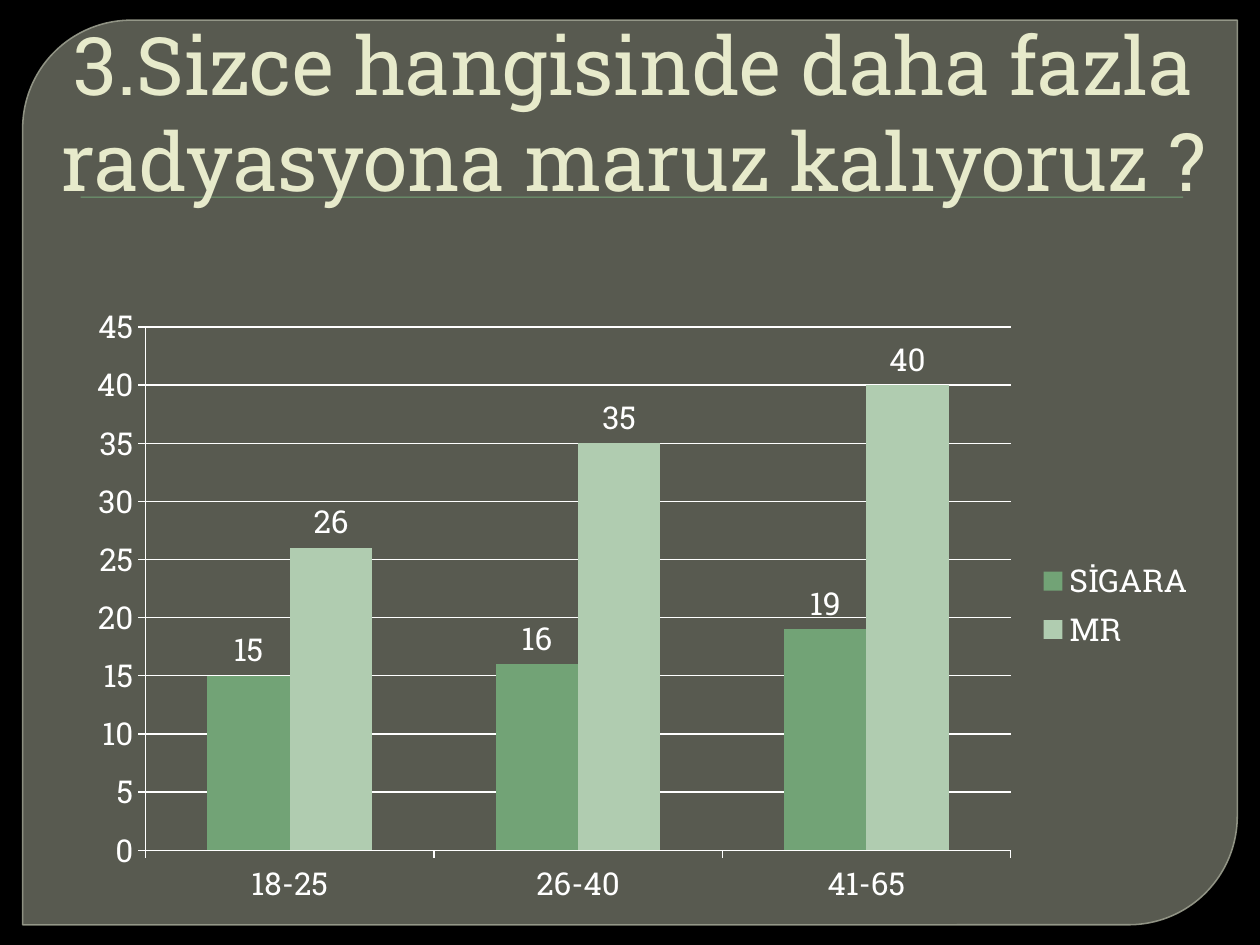
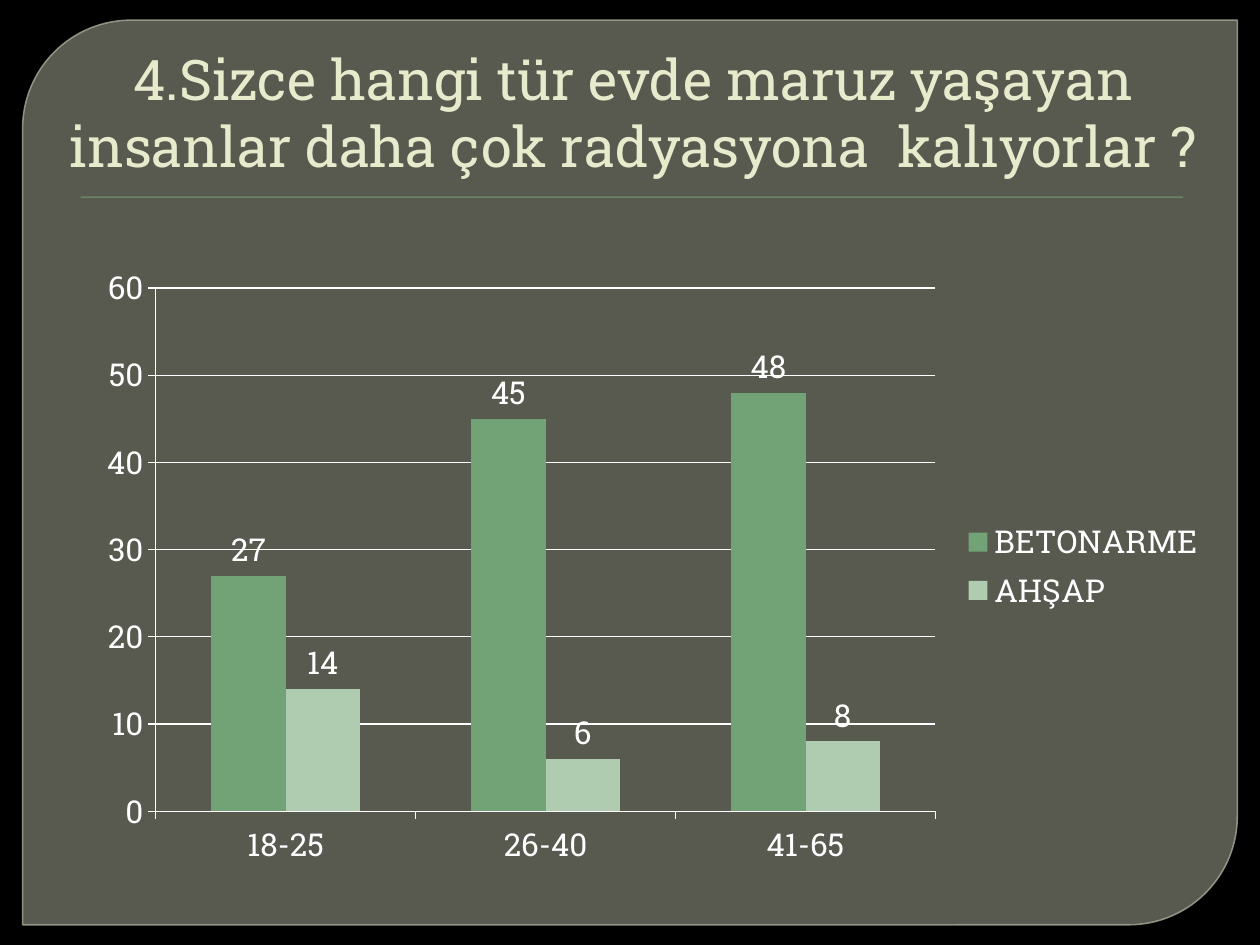
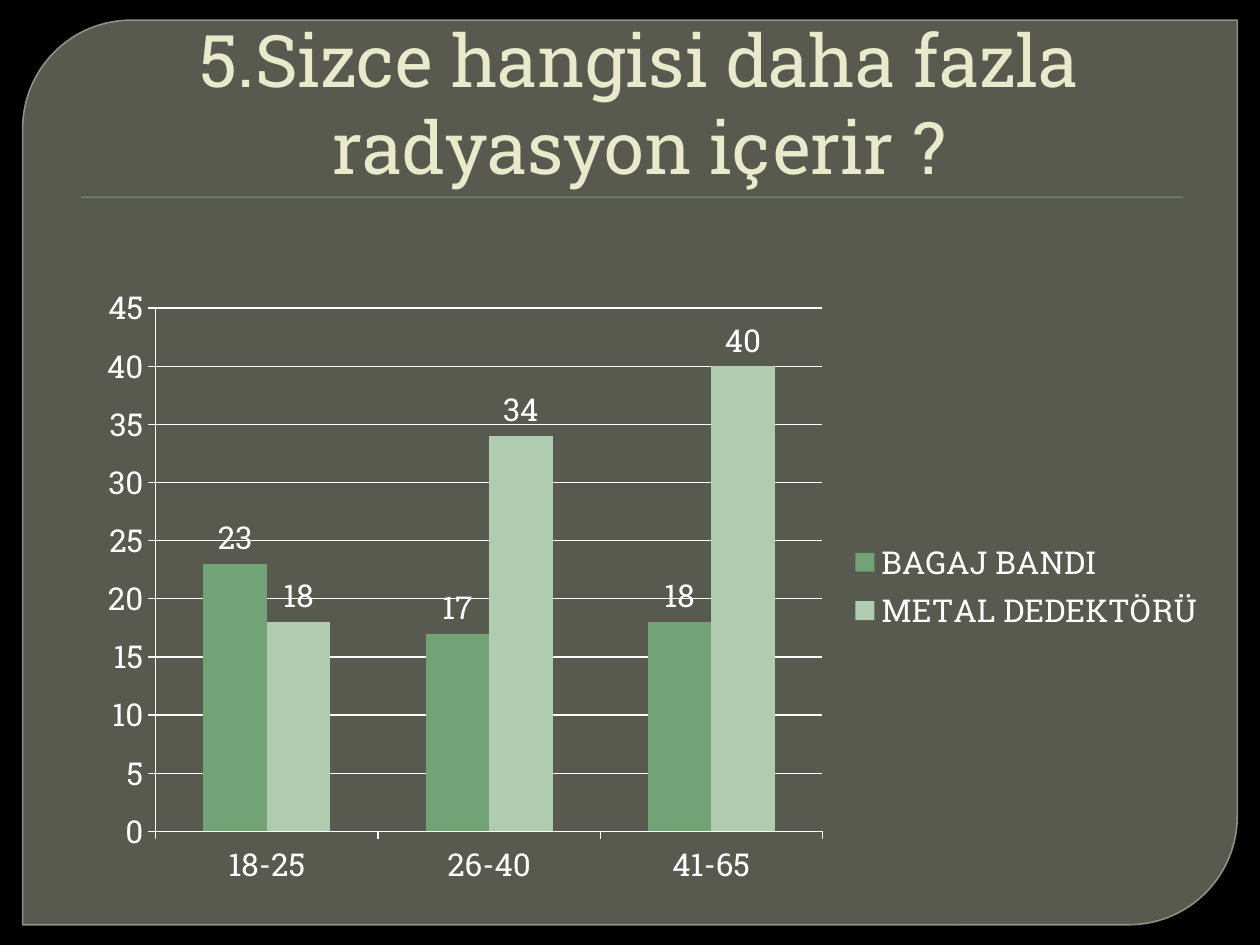
from dataclasses import dataclass

from lxml.etree import SubElement
from pptx import Presentation
from pptx.chart.data import CategoryChartData
from pptx.dml.color import RGBColor
from pptx.enum.chart import XL_CHART_TYPE, XL_LABEL_POSITION, XL_LEGEND_POSITION, XL_TICK_MARK
from pptx.enum.shapes import MSO_SHAPE
from pptx.enum.text import MSO_ANCHOR, MSO_AUTO_SIZE, PP_ALIGN
from pptx.oxml.ns import qn
from pptx.util import Inches, Pt


@dataclass(frozen=True)
class Theme:
    font: str = "Roboto Slab"
    backdrop: str = "000000"
    panel: str = "888B7B"
    panel_edge: str = "9DA090"
    rule: str = "72A376"
    title: str = "E7EACB"
    chart_text: str = "FFFFFF"
    bars: tuple = ("72A376", "B0CCB0")
    chart_size: float = 18
    edge_width: float = 0.87
    grid_width: float = 0.75


THEME = Theme()
TITLE_ONLY = 5
SLIDE_WIDTH, SLIDE_HEIGHT = Inches(10), Inches(7.5)
COLUMNS, ROWS = 100, 75

# Regions are left, top, width, height in grid columns and rows
PANEL_BOX = (1.8, 1.6, 96.4, 71.8)
RULE_BOX = (6.4, 15.6, 87.5, 0.1)

AGE_GROUPS = ("18-25", "26-40", "41-65")
QUESTIONS = (
    {
        "question": "3.Sizce hangisinde daha fazla radyasyona maruz kalıyoruz ?",
        "title_size": 46,
        "title_box": (0, 0, 100, 17),
        "chart_box": (5.9, 23.3, 90, 49.5),
        "answers": {"SİGARA": (15, 16, 19), "MR": (26, 35, 40)},
        "scale": {"maximum_scale": 45, "major_unit": 5},
    },
    {
        "question": "4.Sizce hangi tür evde maruz yaşayan insanlar daha çok radyasyona  kalıyorlar ?",
        "title_size": 32,
        "title_box": (0, 2.1, 100, 12.6),
        "chart_box": (6.7, 20.2, 90, 49.5),
        "answers": {"BETONARME": (27, 45, 48), "AHŞAP": (14, 6, 8)},
        "scale": {"maximum_scale": 60, "major_unit": 10},
    },
    {
        "question": "5.Sizce hangisi daha fazla radyasyon içerir ?",
        "title_size": 41.4,
        "title_box": (8.3, 2.9, 84.3, 12.6),
        "chart_box": (6.7, 21.8, 90, 49.5),
        "answers": {"BAGAJ BANDI": (23, 17, 18), "METAL DEDEKTÖRÜ": (18, 34, 40)},
        "scale": {"maximum_scale": 45, "major_unit": 5},
    },
)


def apply(target, values):
    for attribute, value in values.items():
        setattr(target, attribute, value)


def on_grid(box):
    left, top, width, height = box
    column, row = SLIDE_WIDTH / COLUMNS, SLIDE_HEIGHT / ROWS
    return int(left * column), int(top * row), int(width * column), int(height * row)


def paint(fill, colour):
    fill.solid()
    fill.fore_color.rgb = RGBColor.from_string(colour)


def style_font(font, size, colour):
    apply(font, {"name": THEME.font, "size": Pt(size), "bold": False})
    font.color.rgb = RGBColor.from_string(colour)


def set_opacity(properties, percent):
    colour = next(properties.iter(qn("a:srgbClr")))
    SubElement(colour, qn("a:alpha"), val=str(percent * 1000))


def add_filled(slide, preset, box, colour):
    shape = slide.shapes.add_shape(preset, *on_grid(box))
    shape.shadow.inherit = False
    paint(shape.fill, colour)
    return shape


def decorate_layout(layout, slide):
    """Draw the shared panel and rule, then hand them to the layout."""
    paint(layout.slide_master.background.fill, THEME.backdrop)

    # Rounded, see-through panel
    panel = add_filled(slide, MSO_SHAPE.ROUND_2_DIAG_RECTANGLE, PANEL_BOX, THEME.panel)
    panel.adjustments[0] = 0.12
    panel.line.width = Pt(THEME.edge_width)
    paint(panel.line.fill, THEME.panel_edge)
    properties = panel._element.spPr
    set_opacity(properties.find(qn("a:solidFill")), 65)
    set_opacity(properties.find(qn("a:ln")), 88)

    # Thin rule under the title, with a soft shadow
    rule = add_filled(slide, MSO_SHAPE.RECTANGLE, RULE_BOX, THEME.rule)
    rule.line.fill.background()
    effects = rule._element.spPr.find(qn("a:effectLst"))
    shadow = SubElement(effects, qn("a:outerShdw"), blurRad=str(Pt(1)), dist=str(Pt(1)),
                        dir="5400000", rotWithShape="0")
    shade = SubElement(shadow, qn("a:srgbClr"), val="000000")
    SubElement(shade, qn("a:alpha"), val="75000")

    for shape_id, part in enumerate((panel, rule), start=101):
        part._element.nvSpPr.cNvPr.set("id", str(shape_id))
        layout.shapes._spTree.append(part._element)


def place_title(slide, question, size, box):
    title = slide.shapes.title
    apply(title, dict(zip(("left", "top", "width", "height"), on_grid(box))))
    frame = title.text_frame
    frame.text = question
    apply(frame, {"word_wrap": True, "auto_size": MSO_AUTO_SIZE.NONE,
                  "vertical_anchor": MSO_ANCHOR.BOTTOM})
    paragraph = frame.paragraphs[0]
    paragraph.alignment = PP_ALIGN.CENTER
    paragraph._p.get_or_add_pPr().set("marL", str(Inches(0.06)))
    style_font(paragraph.runs[0].font, size, THEME.title)


def place_chart(slide, answers, scale, box):
    survey = CategoryChartData(number_format="General")
    survey.categories = AGE_GROUPS
    for answer, counts in answers.items():
        survey.add_series(answer, counts)
    chart = slide.shapes.add_chart(XL_CHART_TYPE.COLUMN_CLUSTERED, *on_grid(box), survey).chart
    style_font(chart.font, THEME.chart_size, THEME.chart_text)
    apply(chart, {"has_title": False, "has_legend": True})
    apply(chart.legend, {"position": XL_LEGEND_POSITION.RIGHT, "include_in_layout": False})

    # Bars and their values
    plot = chart.plots[0]
    apply(plot, {"gap_width": 150, "overlap": 0, "vary_by_categories": False,
                 "has_data_labels": True})
    apply(plot.data_labels, {"show_value": True, "position": XL_LABEL_POSITION.OUTSIDE_END})
    for bars, colour in zip(plot.series, THEME.bars):
        paint(bars.format.fill, colour)
        bars.invert_if_negative = False

    # Axes and gridlines
    ages, counts = chart.category_axis, chart.value_axis
    ages.has_major_gridlines = False
    apply(counts, {"minimum_scale": 0, "has_major_gridlines": True, **scale})
    for axis in (ages, counts):
        axis.major_tick_mark = XL_TICK_MARK.OUTSIDE
    for line in (ages.format.line, counts.format.line, counts.major_gridlines.format.line):
        line.width = Pt(THEME.grid_width)
        paint(line.fill, THEME.chart_text)


def main():
    deck = Presentation()
    apply(deck, {"slide_width": SLIDE_WIDTH, "slide_height": SLIDE_HEIGHT})
    layout = deck.slide_layouts[TITLE_ONLY]
    for number, poll in enumerate(QUESTIONS):
        slide = deck.slides.add_slide(layout)
        if number == 0:
            decorate_layout(layout, slide)
        place_title(slide, poll["question"], poll["title_size"], poll["title_box"])
        place_chart(slide, poll["answers"], poll["scale"], poll["chart_box"])
    deck.save("out.pptx")


if __name__ == "__main__":
    main()
